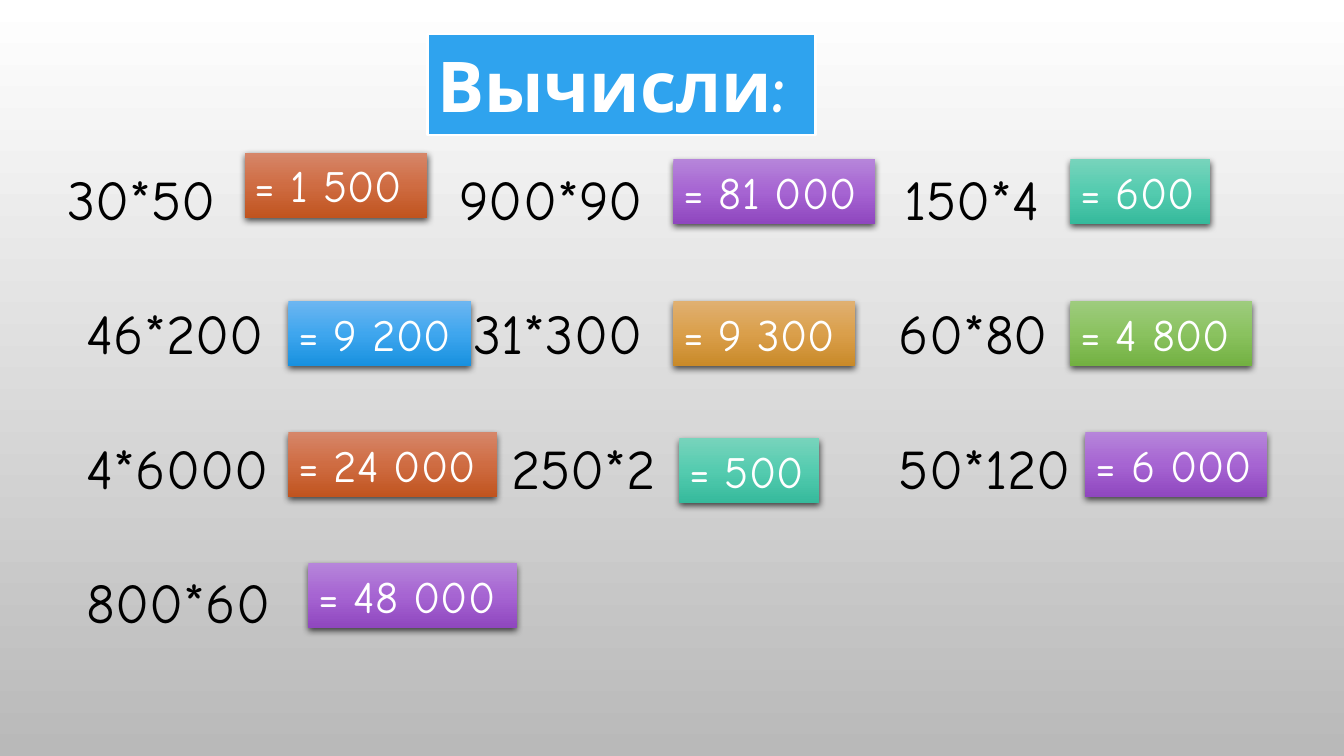
import copy

import pptx
import pptx.dml.color
import pptx.enum.shapes
import pptx.enum.text
import pptx.oxml
import pptx.oxml.ns
import pptx.util

Pt = pptx.util.Pt
RGBColor = pptx.dml.color.RGBColor
RECTANGLE = pptx.enum.shapes.MSO_SHAPE.RECTANGLE
FONT_NAME = "Comic Neue"
NAMESPACE = pptx.oxml.ns.nsdecls("a")

COLORS = {
    "black": "000000",
    "white": "FFFFFF",
    "title": "2FA3EE",
    "backdrop": ["FFFFFF", "B9B9B9"],
    "orange": ["D68669", "CF6C42", "C0541F"],
    "purple": ["B685DA", "A664D2", "8F47BF"],
    "teal": ["77D4BC", "54CBAF", "36BA9C"],
    "blue": ["6CB6F1", "3FA6EE", "1891DF"],
    "gold": ["E0B071", "DA9F4B", "C98A29"],
    "green": ["9ECC7E", "8AC25F", "73B142"],
}


def paint_gradient(fill, element, colors):
    fill.gradient()
    fill.gradient_angle = 270
    stops = next(element.iter(pptx.oxml.ns.qn("a:gsLst")))
    if len(colors) == 3:
        middle = copy.deepcopy(stops[0])
        middle.set("pos", "50000")
        stops.insert(1, middle)
    for stop, color in zip(fill.gradient_stops, colors):
        stop.color.rgb = RGBColor.from_string(color)


def write_text(shape, text, size, color, wrap, bold=False):
    text_frame = shape.text_frame
    text_frame.text = text
    text_frame.word_wrap = wrap
    text_frame.auto_size = pptx.enum.text.MSO_AUTO_SIZE.SHAPE_TO_FIT_TEXT
    text_frame.vertical_anchor = pptx.enum.text.MSO_ANCHOR.TOP
    for paragraph in text_frame.paragraphs:
        paragraph.alignment = pptx.enum.text.PP_ALIGN.LEFT
        for run in paragraph.runs:
            run.font.name = FONT_NAME
            run.font.size = Pt(size)
            run.font.bold = bold
            run.font.color.rgb = RGBColor.from_string(COLORS[color])


presentation = pptx.Presentation()
presentation.slide_width = Pt(960)
presentation.slide_height = Pt(540)
slide = presentation.slides.add_slide(presentation.slide_layouts[6])
paint_gradient(slide.background.fill, slide.element, COLORS["backdrop"])

problem_rows = [
    ("30*50\t900*90\t150*4", [280, 598]),
    ("\t46*200\t31*300\t60*80", [14, 290, 594]),
    ("\t4*6000\t250*2\t50*120", [14, 317, 594]),
    ("\t800*60", [14]),
]
problems = slide.shapes.add_textbox(Pt(41), Pt(113.8), Pt(773.3), Pt(346.3))
write_text(problems, "\n".join(text for text, tabs in problem_rows), 40, "black", True)
for index, (text, tabs) in enumerate(problem_rows):
    paragraph = problems.text_frame.paragraphs[index]
    paragraph.space_before = Pt(48 if index else 0)
    tab_stops = "".join(f'<a:tab pos="{Pt(tab)}" algn="l"/>' for tab in tabs)
    paragraph._p.get_or_add_pPr().append(
        pptx.oxml.parse_xml(f"<a:tabLst {NAMESPACE}>{tab_stops}</a:tabLst>")
    )

title = slide.shapes.add_shape(RECTANGLE, Pt(305.3), Pt(24.5), Pt(277.2), Pt(72))
title.shadow.inherit = False
title.fill.solid()
title.fill.fore_color.rgb = RGBColor.from_string(COLORS["title"])
title.line.color.rgb = RGBColor.from_string(COLORS["white"])
title.line.width = Pt(1.75)
write_text(title, "Вычисли:", 50, "white", False, bold=True)
title.text_frame.auto_size = pptx.enum.text.MSO_AUTO_SIZE.NONE
title.text_frame.vertical_anchor = pptx.enum.text.MSO_ANCHOR.MIDDLE

answers = [
    ("= 1 500", 175, 109.4, 130.3, "orange"),
    ("= 81 000", 481, 113.8, 144, "purple"),
    ("= 600", 764.6, 113.8, 100, "teal"),
    ("= 9 200", 206, 215.3, 130.3, "blue"),
    ("= 9 300", 481, 215.3, 129.6, "gold"),
    ("= 4 800", 764.6, 215.3, 129.6, "green"),
    ("= 24 000", 206, 308.9, 149, "orange"),
    ("= 500", 485.3, 313.2, 100, "teal"),
    ("= 6 000", 775.4, 308.9, 129.6, "purple"),
    ("= 48 000", 220.3, 402.5, 149, "purple"),
]
for text, left, top, width, color in answers:
    answer = slide.shapes.add_shape(RECTANGLE, Pt(left), Pt(top), Pt(width), Pt(46))
    paint_gradient(answer.fill, answer.element, COLORS[color])
    answer.line.fill.background()
    answer.shadow.inherit = False
    effects = next(answer.element.iter(pptx.oxml.ns.qn("a:effectLst")))
    effects.append(pptx.oxml.parse_xml(
        f'<a:outerShdw {NAMESPACE} blurRad="{Pt(5)}" dist="{Pt(2)}" dir="5400000" rotWithShape="0">'
        f'<a:srgbClr val="{COLORS["black"]}"><a:alpha val="69000"/></a:srgbClr></a:outerShdw>'
    ))
    write_text(answer, text, 32, "white", False)

presentation.save("out.pptx")
